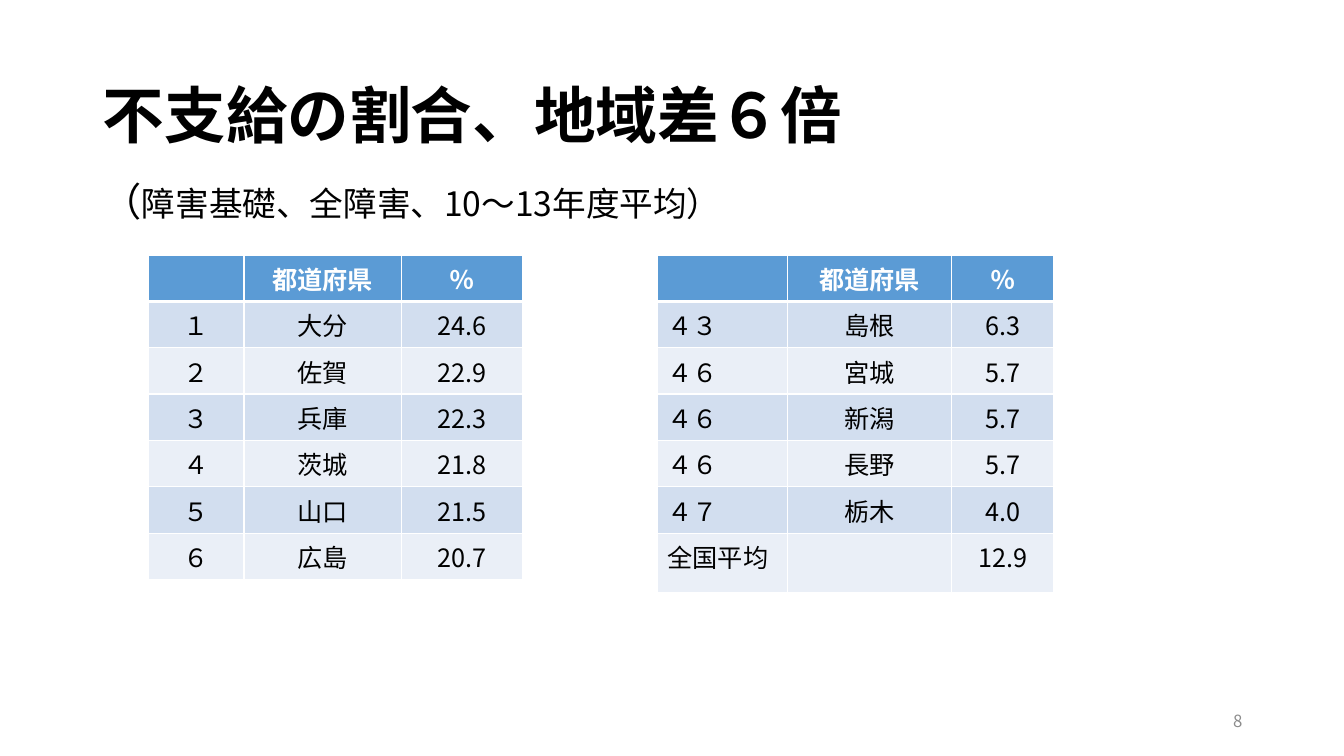
from dataclasses import dataclass

from lxml import etree
from pptx import Presentation
from pptx import util as u
from pptx.dml.color import RGBColor
from pptx.enum import text
from pptx.oxml import ns


@dataclass(frozen=True)
class Theme:
    font: str = "Noto Sans CJK JP"
    black: str = "000000"
    white: str = "FFFFFF"
    grey: str = "8C8C8C"
    header: str = "5B9BD5"
    bands: tuple = ("D2DEEF", "EAEFF7")
    title: int = 44
    bracket: int = 28
    subtitle: int = 24
    table: int = 18
    number: int = 12


theme = Theme()
LEFT, CENTER, RIGHT = text.PP_ALIGN.LEFT, text.PP_ALIGN.CENTER, text.PP_ALIGN.RIGHT


def add_text(paragraph, content, size, color=theme.black, bold=False, align=LEFT):
    paragraph.alignment = align
    run = paragraph.add_run()
    run.text = content
    run.font.size = u.Pt(size)
    run.font.bold = bold
    run.font.name = theme.font
    run.font.color.rgb = RGBColor.from_string(color)
    east_asian = etree.SubElement(run.font._element, ns.qn("a:ea"))
    east_asian.set("typeface", theme.font)


def format_cell(cell, fill, top, bottom):
    properties = cell._tc.get_or_add_tcPr()
    for side, width in (("L", 1), ("R", 1), ("T", top), ("B", bottom)):
        line = etree.SubElement(properties, ns.qn(f"a:ln{side}"), w=str(u.Pt(width)))
        solid = etree.SubElement(line, ns.qn("a:solidFill"))
        etree.SubElement(solid, ns.qn("a:srgbClr"), val=theme.white)
    cell.fill.solid()
    cell.fill.fore_color.rgb = RGBColor.from_string(fill)


presentation = Presentation()
presentation.slide_width = u.Inches(13.33)
presentation.slide_height = u.Inches(7.5)
slide = presentation.slides.add_slide(presentation.slide_layouts[5])

# Title
title = slide.shapes.title
title.left, title.top = u.Inches(0.92), u.Inches(0.4)
title.width, title.height = u.Inches(11.5), u.Inches(1.55)
title.text_frame.auto_size = text.MSO_AUTO_SIZE.NONE
title.text_frame.vertical_anchor = text.MSO_ANCHOR.MIDDLE
title_paragraph = title.text_frame.paragraphs[0]
title_paragraph.line_spacing = 0.9
add_text(title_paragraph, "不支給の割合、地域差６倍", theme.title, bold=True)

# Subtitle
subtitle = slide.shapes.add_textbox(
    u.Inches(0.92), u.Inches(1.76), u.Inches(6.78), u.Inches(5.03))
subtitle.text_frame.word_wrap = True
subtitle_paragraph = subtitle.text_frame.paragraphs[0]
subtitle_paragraph.line_spacing = 0.9
subtitle_paragraph.space_before = u.Pt(10)
add_text(subtitle_paragraph, "（", theme.bracket)
add_text(subtitle_paragraph, "障害基礎、全障害、10～13年度平均）", theme.subtitle)

# Tables: left edge, column widths, last row height, rank alignment, rows
heading = ("", "都道府県", "％")
lowest = [
    heading, ("４３", "島根", "6.3"), ("４６", "宮城", "5.7"), ("４６", "新潟", "5.7"),
    ("４６", "長野", "5.7"), ("４７", "栃木", "4.0"), ("全国平均", "", "12.9"),
]
highest = [
    heading, ("１", "大分", "24.6"), ("２", "佐賀", "22.9"), ("３", "兵庫", "22.3"),
    ("４", "茨城", "21.8"), ("５", "山口", "21.5"), ("６", "広島", "20.7"),
]
row_height = 0.46
tables = [
    (6.52, (1.29, 1.63, 1.01), 0.59, LEFT, lowest),
    (1.47, (0.95, 1.56, 1.2), row_height, CENTER, highest),
]
for left, widths, last_height, rank_align, rows in tables:
    height = row_height * (len(rows) - 1) + last_height
    table = slide.shapes.add_table(
        len(rows), len(widths), u.Inches(left), u.Inches(2.53),
        u.Inches(sum(widths)), u.Inches(height)).table
    for column, width in zip(table.columns, widths):
        column.width = u.Inches(width)
    for row in table.rows:
        row.height = u.Inches(row_height)
    table.rows[len(rows) - 1].height = u.Inches(last_height)

    for r, values in enumerate(rows):
        is_header = r == 0
        fill = theme.header if is_header else theme.bands[(r - 1) % 2]
        for c, value in enumerate(values):
            cell = table.cell(r, c)
            format_cell(cell, fill, top=3 if r == 1 else 1, bottom=3 if is_header else 1)
            add_text(cell.text_frame.paragraphs[0], value, theme.table,
                     color=theme.white if is_header else theme.black,
                     bold=is_header, align=rank_align if c == 0 else CENTER)

# Slide number
number = slide.shapes.add_textbox(
    u.Inches(9.42), u.Inches(6.95), u.Inches(3), u.Inches(0.4))
number.text_frame.word_wrap = True
number.text_frame.vertical_anchor = text.MSO_ANCHOR.MIDDLE
add_text(number.text_frame.paragraphs[0], "8", theme.number, color=theme.grey, align=RIGHT)

presentation.save("out.pptx")
